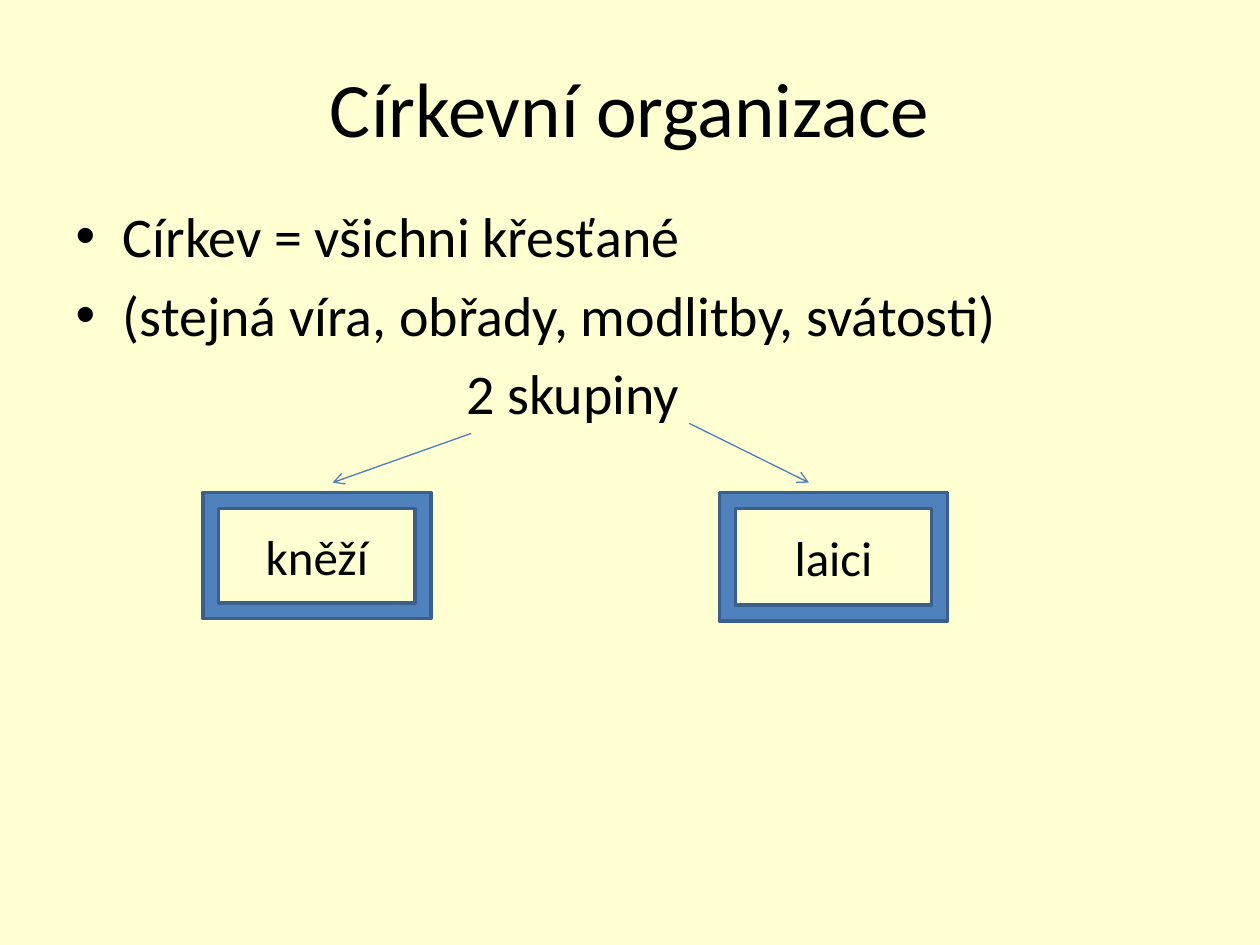
from lxml.etree import SubElement
from pptx import Presentation
from pptx.dml.color import RGBColor
from pptx.enum.shapes import MSO_CONNECTOR, MSO_SHAPE
from pptx.enum.text import MSO_ANCHOR, PP_ALIGN
from pptx.oxml.ns import qn
from pptx.util import Inches, Pt

COLORS = {
    "background": "FFFFD1",
    "text": "000000",
    "frame": "4F81BD",
    "frame_line": "3A5F8C",
    "arrow": "4B7EBC",
}
WIDTH, HEIGHT = Inches(10), Inches(7.5)
COLUMN, ROW = WIDTH / 100, HEIGHT / 75  # grid of 0.1 inch cells

TITLE_BOX = (5, 3, 90, 10.9)
BODY_BOX = (5, 15.5, 90, 51.5)
GROUPS = [  # label, frame box, arrow start, arrow end
    ("laici", (57.1, 39.1, 18.1, 10.2), (54.7, 33.6), (64.2, 38.3)),
    ("kněží", (16.1, 39.1, 18.1, 10), (37.4, 34.4), (26.4, 38.3)),
]
BULLETS = ["Církev = všichni křesťané", "(stejná víra, obřady, modlitby, svátosti)"]


def color(name):
    return RGBColor.from_string(COLORS[name])


def to_lengths(cells):
    """Turn alternating column and row counts into slide lengths."""
    return [round(count * (ROW if i % 2 else COLUMN)) for i, count in enumerate(cells)]


def place(shape, box):
    for name, value in zip(("left", "top", "width", "height"), to_lengths(box)):
        setattr(shape, name, value)


def write(para, text, size):
    span = para.add_run()
    span.text = text
    for name, value in {"name": "Calibri", "size": Pt(size)}.items():
        setattr(span.font, name, value)
    span.font.color.rgb = color("text")


def add_title(page, box):
    title = page.shapes.title
    place(title, box)
    title.text_frame.vertical_anchor = MSO_ANCHOR.MIDDLE
    para = title.text_frame.paragraphs[0]
    para.alignment = PP_ALIGN.CENTER
    write(para, "Církevní organizace", 44)


def add_body(page, box):
    body = page.placeholders[1]
    place(body, box)
    frame = body.text_frame
    for i, text in enumerate(BULLETS):
        para = frame.add_paragraph() if i else frame.paragraphs[0]
        write(para, text, 32)
    heading = frame.add_paragraph()
    write(heading, "2 skupiny", 32)
    properties = heading._p.get_or_add_pPr()
    properties.set("marL", str(round(31 * COLUMN)))
    properties.set("indent", "0")
    SubElement(properties, qn("a:buNone"))


def add_frame(page, label, box):
    shape = page.shapes.add_shape(MSO_SHAPE.FRAME, *to_lengths(box))
    shape.shadow.inherit = False
    shape.fill.solid()
    shape.fill.fore_color.rgb = color("frame")
    shape.line.color.rgb = color("frame_line")
    shape.line.width = Pt(2)
    shape.text_frame.vertical_anchor = MSO_ANCHOR.MIDDLE
    para = shape.text_frame.paragraphs[0]
    para.alignment = PP_ALIGN.CENTER
    write(para, label, 28)


def add_arrow(page, start, end):
    arrow = page.shapes.add_connector(MSO_CONNECTOR.STRAIGHT, *to_lengths(start + end))
    arrow.line.color.rgb = color("arrow")
    arrow.line.width = Pt(0.75)
    SubElement(arrow.line._get_or_add_ln(), qn("a:tailEnd"), type="arrow")
    SubElement(arrow._element.spPr, qn("a:effectLst"))


def main():
    deck = Presentation()
    deck.slide_width, deck.slide_height = WIDTH, HEIGHT
    page = deck.slides.add_slide(deck.slide_layouts[1])
    page.background.fill.solid()
    page.background.fill.fore_color.rgb = color("background")
    add_title(page, TITLE_BOX)
    add_body(page, BODY_BOX)
    for label, box, start, end in GROUPS:
        add_frame(page, label, box)
        add_arrow(page, start, end)
    deck.save("out.pptx")


if __name__ == "__main__":
    main()
